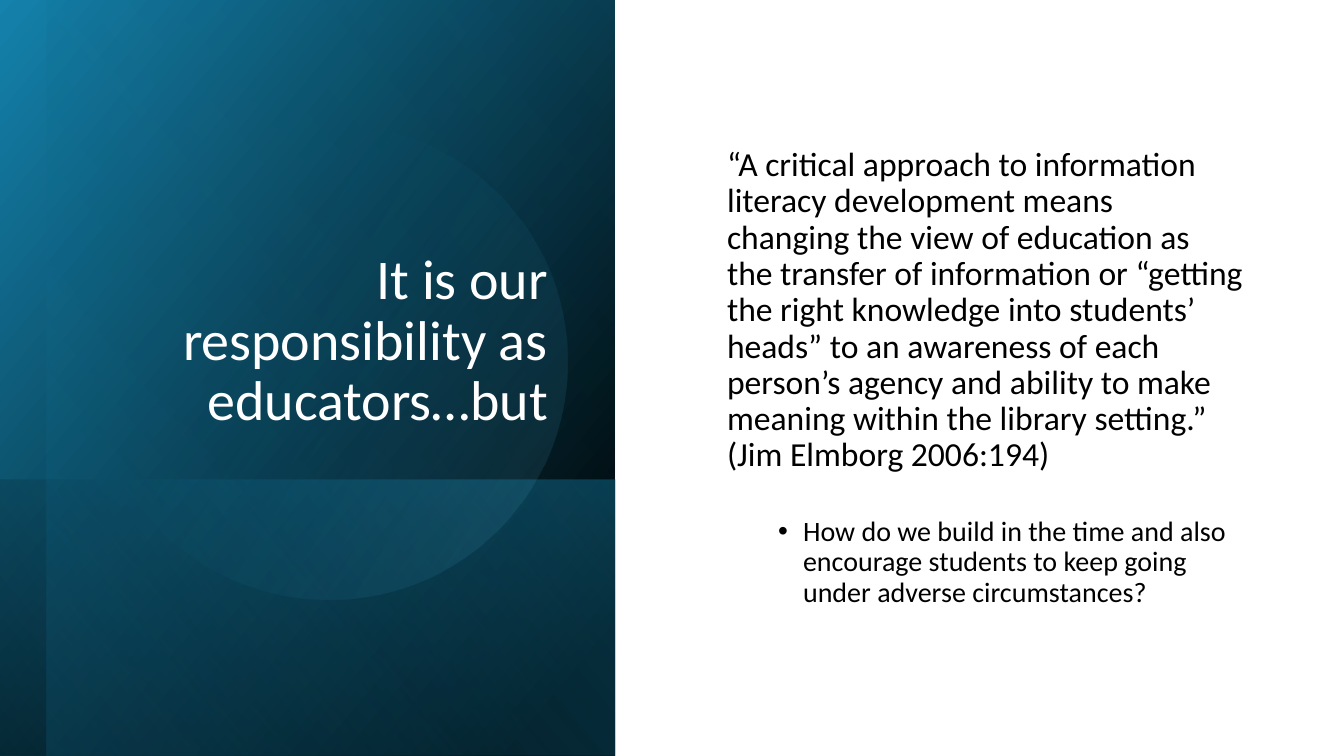
from lxml.etree import SubElement
from pptx import Presentation
from pptx.dml.color import RGBColor
from pptx.enum.shapes import MSO_SHAPE as Shape
from pptx.enum.text import MSO_ANCHOR as Anchor, MSO_AUTO_SIZE as AutoSize, PP_ALIGN as Align
from pptx.oxml.ns import qn
from pptx.util import Emu, Pt

COLORS = {"black": "000000", "white": "FFFFFF", "blue": "1482AC",
          "cyan": "1CADE4", "sky": "77CEEF"}
FONT = "Calibri"
SLIDE_WIDTH, SLIDE_HEIGHT = 1344, 756
PANEL_WIDTH = 615

TITLE = "It is our responsibility as educators…but"
QUOTE = ("“A critical approach to information literacy development means changing "
         "the view of education as the transfer of information or “getting the right "
         "knowledge into students’ heads” to an awareness of each person’s agency and "
         "ability to make meaning within the library setting.” (Jim Elmborg 2006:194)")
QUESTION = ("How do we build in the time and also encourage students to keep going "
            "under adverse circumstances?")


def px(length):
    return Emu(round(length * 914400 / 100.8))


def write_text(paragraph, text, *, size, color="black", align=Align.LEFT, before=0,
               level=0, margin=0, indent=0, bullet=None):
    paragraph.level = level
    paragraph.alignment = align
    paragraph.line_spacing = 0.9
    paragraph.space_before = Pt(before)
    paragraph.space_after = Pt(0)
    run = paragraph.add_run()
    run.text = text
    run.font.name = FONT
    run.font.size = Pt(size)
    run.font.color.rgb = RGBColor.from_string(COLORS[color])
    # Bullet and indents
    properties = paragraph._p.get_or_add_pPr()
    properties.set("marL", str(px(margin)))
    properties.set("indent", str(px(indent)))
    if bullet:
        SubElement(properties, qn("a:buFont"), typeface="Arial")
        SubElement(properties, qn("a:buChar"), char=bullet)
    else:
        SubElement(properties, qn("a:buNone"))


class SlideBuilder:
    def __init__(self, presentation):
        self.slide = presentation.slides.add_slide(presentation.slide_layouts[1])

    def gradient_shape(self, kind, left, top, width, height, stops, angle, rotation):
        """Each stop is (position %, colour name, opacity %)."""
        shape = self.slide.shapes.add_shape(kind, px(left), px(top), px(width), px(height))
        shape.shadow.inherit = False
        shape.line.fill.background()
        shape.rotation = rotation
        shape.fill.gradient()
        shape.fill.gradient_angle = 360 - angle
        for stop, (position, color, _) in zip(shape.fill.gradient_stops, stops):
            stop.position = position / 100
            stop.color.rgb = RGBColor.from_string(COLORS[color])
        for color_element, (_, _, opacity) in zip(shape.element.xpath(".//a:gs/a:srgbClr"), stops):
            if opacity < 100:
                SubElement(color_element, qn("a:alpha"), val=str(opacity * 1000))
        return shape

    def panel(self, left, top, stops, angle):
        """Quarter-turned, mirrored panel reaching the dark area's lower right corner."""
        width, height = PANEL_WIDTH - left, SLIDE_HEIGHT - top
        shift = (width - height) / 2
        shape = self.gradient_shape(Shape.RECTANGLE, left + shift, top - shift,
                                    height, width, stops, angle, 90)
        shape.element.spPr.xfrm.set("flipH", "1")

    def placeholder(self, index, left, top, width, height, anchor):
        shape = self.slide.placeholders[index]
        shape.left, shape.top = px(left), px(top)
        shape.width, shape.height = px(width), px(height)
        shape.element.getparent().append(shape.element)  # bring to front
        frame = shape.text_frame
        frame.word_wrap = True
        frame.auto_size = AutoSize.NONE
        frame.vertical_anchor = anchor
        return frame


def main():
    presentation = Presentation()
    presentation.slide_width, presentation.slide_height = px(SLIDE_WIDTH), px(SLIDE_HEIGHT)
    builder = SlideBuilder(presentation)

    # Dark side: base, lower band, inner tint, disc
    builder.panel(0, 0, [(8, "black", 100), (100, "blue", 100)], 50)
    builder.panel(0, 480, [(2, "cyan", 29), (100, "black", 30)], 130)
    builder.panel(47, 0, [(0, "black", 0), (99, "cyan", 11)], 130)
    builder.gradient_shape(Shape.OVAL, 91, 124, 476, 476,
                           [(39, "cyan", 0), (100, "sky", 15)], 290, 101.6)

    # Title
    title = builder.placeholder(0, 91, 65, 467, 373, Anchor.BOTTOM)
    write_text(title.paragraphs[0], TITLE, size=40, color="white", align=Align.RIGHT)

    # Quote and question
    body = builder.placeholder(1, 717, 72, 536, 612, Anchor.MIDDLE)
    write_text(body.paragraphs[0], QUOTE, size=24, before=10)
    write_text(body.add_paragraph(), QUESTION, size=20, before=31, level=1,
               margin=76, indent=-25, bullet="•")

    presentation.save("out.pptx")


if __name__ == "__main__":
    main()
